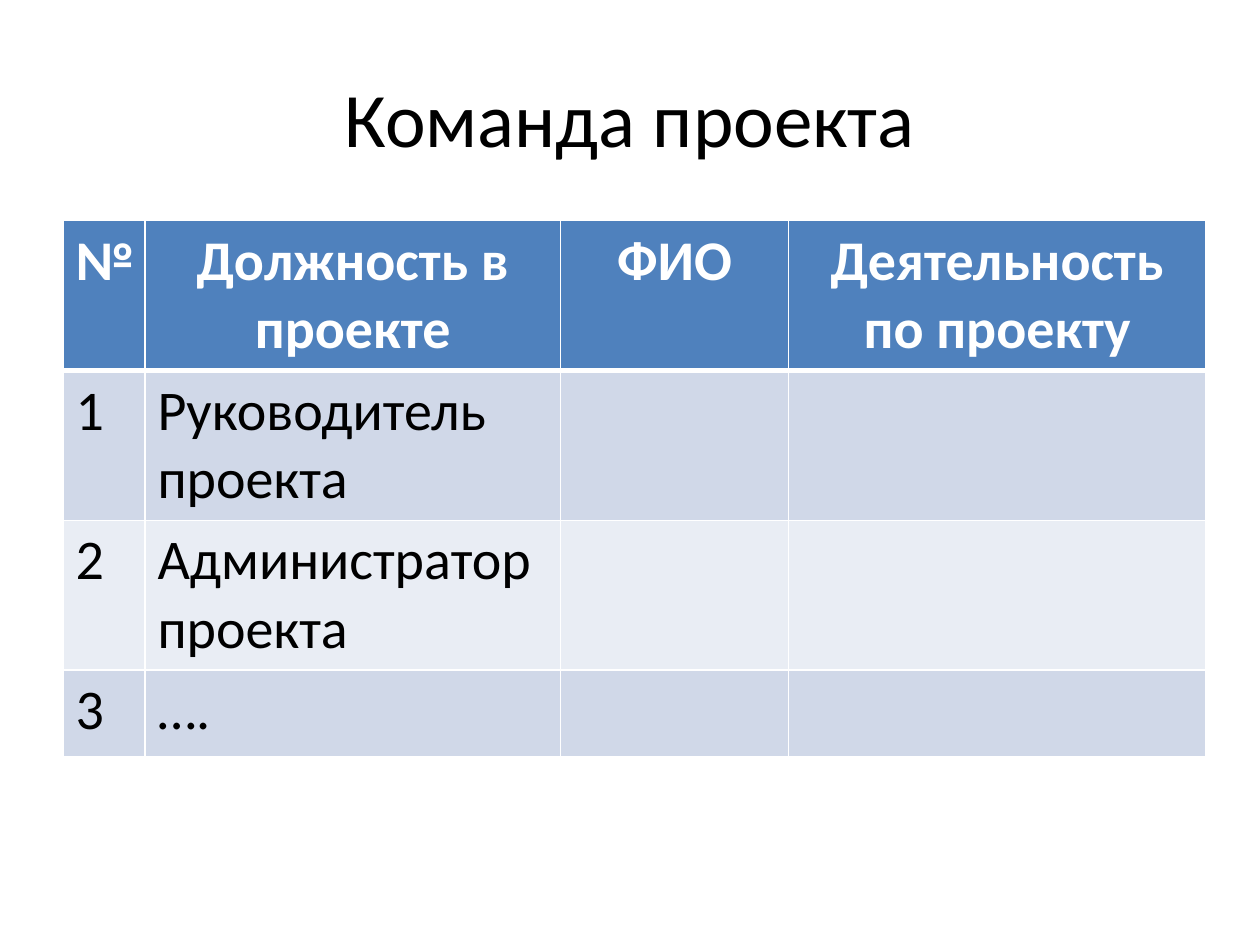
import pptx
import pptx.dml.color
import pptx.enum.text
import pptx.oxml.ns
import pptx.util
from lxml import etree

RGBColor = pptx.dml.color.RGBColor
Inches = pptx.util.Inches
Align = pptx.enum.text.PP_ALIGN
Anchor = pptx.enum.text.MSO_ANCHOR

BLACK = RGBColor(0x00, 0x00, 0x00)
WHITE = RGBColor(0xFF, 0xFF, 0xFF)
HEADER_BLUE = RGBColor(0x4F, 0x81, 0xBD)
BAND_DARK = RGBColor(0xD0, 0xD8, 0xE8)
BAND_LIGHT = RGBColor(0xE9, 0xED, 0xF4)

SLIDE_WIDTH, SLIDE_HEIGHT = Inches(10), Inches(7.5)
COLUMN_WIDTHS = [0.65, 3.3, 1.81, 3.31]
ROW_HEIGHTS = [1.19, 1.19, 1.19, 0.69]
TEAM_ROWS = [
    ["№", "Должность в проекте", "ФИО", "Деятельность по проекту"],
    ["1", "Руководитель проекта", "", ""],
    ["2", "Администратор проекта", "", ""],
    ["3", "….", "", ""],
]


def write_text(frame, text, size=32, color=BLACK, bold=False, align=Align.LEFT):
    frame.word_wrap = True
    paragraph = frame.paragraphs[0]
    paragraph.alignment = align
    run = paragraph.add_run()
    run.text = text
    run.font.name = "Calibri"
    run.font.size = pptx.util.Pt(size)
    run.font.bold = bold
    run.font.color.rgb = color


def add_title(slide, text):
    box = slide.shapes.add_textbox(
        int(SLIDE_WIDTH * 0.05), int(SLIDE_HEIGHT * 0.04),
        int(SLIDE_WIDTH * 0.9), int(SLIDE_HEIGHT / 6))
    box.text_frame.vertical_anchor = Anchor.MIDDLE
    write_text(box.text_frame, text, size=44, align=Align.CENTER)


def set_borders(cell, widths):
    properties = cell._tc.get_or_add_tcPr()
    qualified = pptx.oxml.ns.qn
    for position, (side, width) in enumerate(widths.items()):
        line = etree.Element(qualified(f"a:ln{side}"), w=str(pptx.util.Pt(width)))
        fill = etree.SubElement(line, qualified("a:solidFill"))
        etree.SubElement(fill, qualified("a:srgbClr"), val=str(WHITE))
        properties.insert(position, line)


def format_cell(cell, text, row):
    header = row == 0
    band = BAND_DARK if row % 2 else BAND_LIGHT
    cell.fill.solid()
    cell.fill.fore_color.rgb = HEADER_BLUE if header else band
    set_borders(cell, {"L": 1, "R": 1, "T": 3 if row == 1 else 1, "B": 3 if header else 1})
    if text:
        write_text(cell.text_frame, text, bold=header,
                   color=WHITE if header else BLACK,
                   align=Align.CENTER if header else Align.LEFT)


def add_team_table(slide, rows):
    table = slide.shapes.add_table(
        len(rows), len(COLUMN_WIDTHS),
        int(SLIDE_WIDTH * 0.05), Inches(1.75),
        Inches(sum(COLUMN_WIDTHS)), Inches(sum(ROW_HEIGHTS))).table
    for column, width in zip(table.columns, COLUMN_WIDTHS):
        column.width = Inches(width)
    for row, height in zip(table.rows, ROW_HEIGHTS):
        row.height = Inches(height)
    for row, texts in enumerate(rows):
        for column, text in enumerate(texts):
            format_cell(table.cell(row, column), text, row)


def main():
    presentation = pptx.Presentation()
    presentation.slide_width = SLIDE_WIDTH
    presentation.slide_height = SLIDE_HEIGHT
    slide = presentation.slides.add_slide(presentation.slide_layouts[6])
    add_title(slide, "Команда проекта")
    add_team_table(slide, TEAM_ROWS)
    presentation.save("out.pptx")


if __name__ == "__main__":
    main()
